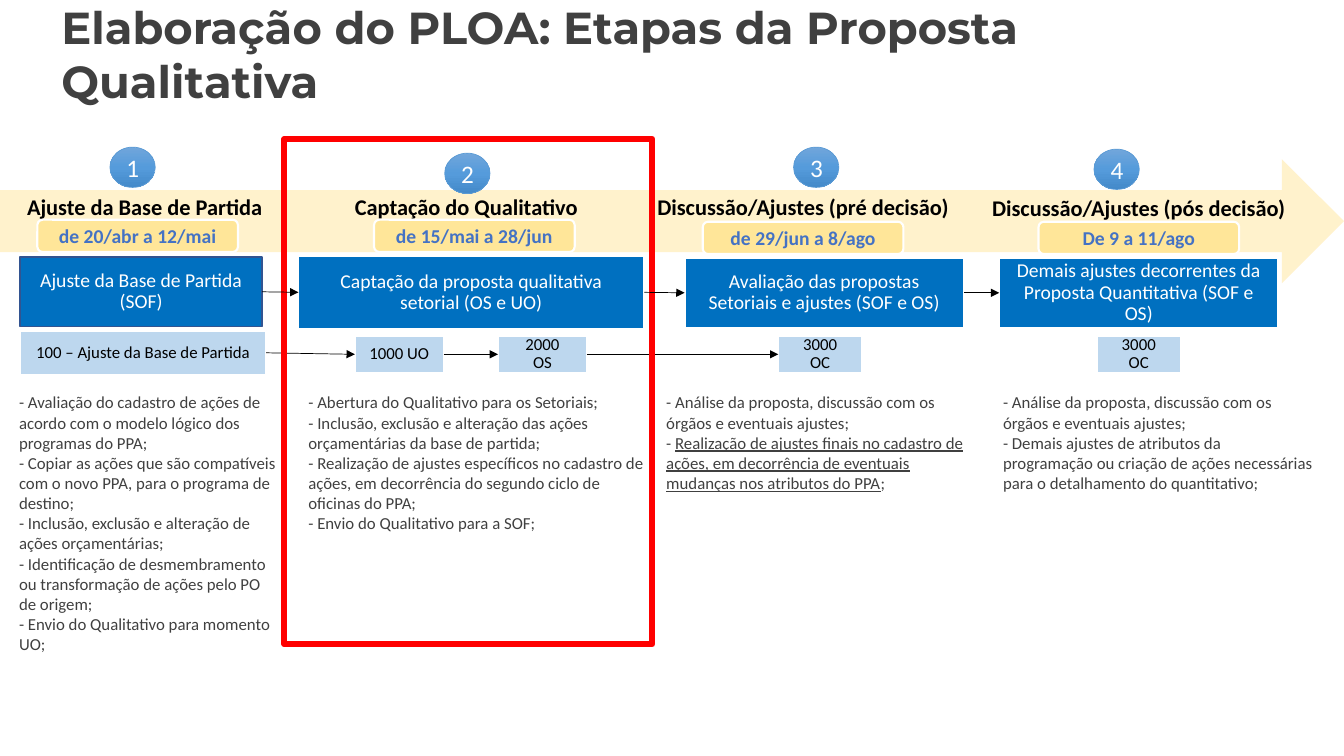
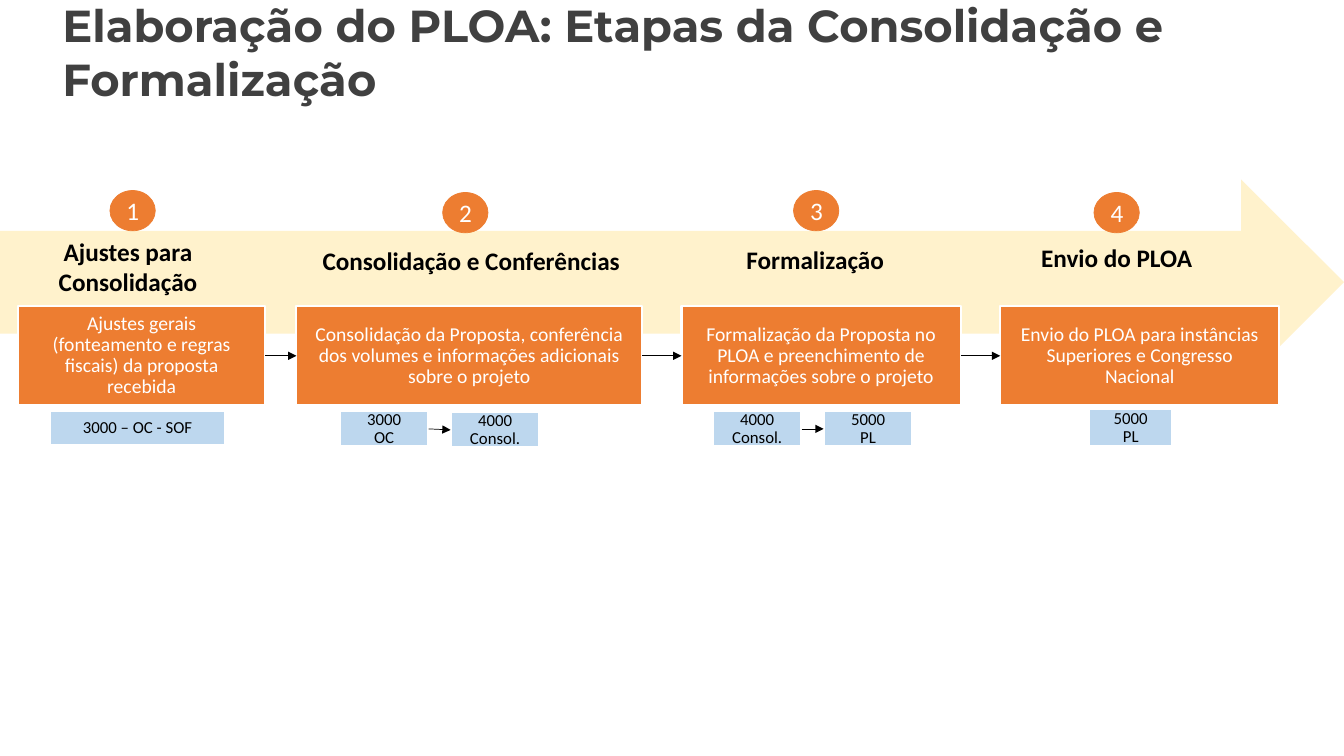
"""Build two slides showing the stages of the PLOA budget proposal."""
from copy import deepcopy
from itertools import pairwise

from pptx import Presentation
from pptx.dml.color import RGBColor
from pptx.enum.shapes import MSO_CONNECTOR, MSO_SHAPE
from pptx.enum.text import MSO_ANCHOR, PP_ALIGN
from pptx.oxml.ns import qn
from pptx.oxml.xmlchemy import OxmlElement
from pptx.util import Inches, Pt

THEME = {
    "band": "FFF2CC",
    "chip": "BDD7EE",
    "date": "FFE699",
    "white": "FFFFFF",
    "black": "000000",
    "highlight": "FF0000",
    "title": {"name": "Montserrat", "size": 32, "bold": True, "color": "404040"},
    "badge": {"name": "Calibri", "size": 18, "color": "FFFFFF"},
    "step": {"name": "Calibri", "size": 14, "color": "FFFFFF"},
    "code": {"name": "Calibri", "size": 12, "color": "000000"},
    "when": {"name": "Calibri", "size": 14, "bold": True, "color": "4472C4"},
    "note": {"name": "Calibri", "size": 12, "color": "404040"},
    "label": {"name": "Calibri", "bold": True, "color": "000000"},
    "inset": 0.12,
    "narrow": 0.18,
}
WIDE, NARROW = THEME["inset"], THEME["narrow"]

QUALITATIVE = {
    "title": ("Elaboração do PLOA: Etapas da Proposta Qualitativa", (0.51, 0.01, 10.62, 1.04)),
    "band": (0, 1.58, 13.33, 1.23),
    "step_fill": "0070C0",
    "badge_fill": ("71A6DB", "559BDB", "448ACA"),
    "badge_line": "5B9BD5",
    "label_size": 16,
    "badges": [(1.09, 1.46), (4.41, 1.52), (7.87, 1.46), (10.85, 1.48)],
    "labels": [
        ("Ajuste da Base de Partida", (0.09, 1.87, 2.69, 0.37)),
        ("Captação do Qualitativo", (2.96, 1.87, 3.33, 0.37)),
        ("Discussão/Ajustes (pré decisão)", (6.38, 1.87, 3.17, 0.37)),
        ("Discussão/Ajustes (pós decisão)", (9.56, 1.88, 3.47, 0.37)),
    ],
    "dates": [
        ("de 20/abr a 12/mai", (0.37, 2.18, 1.99, 0.32)),
        ("de 15/mai a 28/jun", (3.71, 2.18, 1.99, 0.32)),
        ("de 29/jun a 8/ago", (6.97, 2.2, 1.99, 0.32)),
        ("De 9 a 11/ago", (10.3, 2.2, 1.99, 0.32)),
    ],
    "steps": [
        ("Ajuste da Base de Partida (SOF)", (0.2, 2.55, 2.4, 0.69), ("325491", 1)),
        ("Captação da proposta qualitativa setorial (OS e UO)", (2.96, 2.54, 3.43, 0.72)),
        ("Avaliação das propostas Setoriais e ajustes (SOF e OS)", (6.79, 2.56, 2.77, 0.69)),
        ("Demais ajustes decorrentes da Proposta Quantitativa (SOF e OS)", (9.91, 2.56, 2.77, 0.69)),
    ],
    "chips": [
        ("100 – Ajuste da Base de Partida", (0.2, 3.28, 2.44, 0.44), WIDE),
        ("1000 UO", (3.52, 3.33, 0.88, 0.37), WIDE),
        ("2000 OS", (4.94, 3.33, 0.88, 0.37), NARROW),
        ("3000 OC", (7.72, 3.33, 0.83, 0.37), NARROW),
        ("3000 OC", (10.88, 3.33, 0.83, 0.37), NARROW),
    ],
    "chip_links": [(0, 1), (1, 2), (2, 3)],
    "notes": [
        ((0.09, 3.89, 2.69, 2.63), [
            "- Avaliação do cadastro de ações de acordo com o modelo lógico dos programas do PPA;",
            "- Copiar as ações que são compatíveis com o novo PPA, para o programa de destino;",
            "- Inclusão, exclusão e alteração de ações orçamentárias;",
            "- Identificação de desmembramento ou transformação de ações pelo PO de origem;",
            "- Envio do Qualitativo para momento UO;",
        ]),
        ((2.96, 3.89, 3.55, 1.41), [
            "- Abertura do Qualitativo para os Setoriais;",
            "- Inclusão, exclusão e alteração das ações orçamentárias da base de partida;",
            "- Realização de ajustes específicos no cadastro de ações, em decorrência do segundo "
            "ciclo de oficinas do PPA;",
            "- Envio do Qualitativo para a SOF;",
        ]),
        ((6.51, 3.89, 3.17, 1.01), [
            "- Análise da proposta, discussão com os órgãos e eventuais ajustes;",
            ("- ", "Realização de ajustes finais no cadastro de ações, em decorrência de eventuais "
             "mudanças nos atributos do PPA", ";"),
        ]),
        ((9.85, 3.89, 3.17, 1.21), [
            "- Análise da proposta, discussão com os órgãos e eventuais ajustes;",
            "- Demais ajustes de atributos da programação ou criação de ações necessárias para o "
            "detalhamento do quantitativo;",
        ]),
    ],
    "highlight": (2.82, 1.38, 3.65, 5.01),
}

FORMALIZATION = {
    "title": ("Elaboração do PLOA: Etapas da Consolidação e Formalização", (0.52, 0.21, 11.89, 0.61)),
    "band": (0, 1.78, 13.33, 2.04),
    "step_fill": "ED7D31",
    "badge_fill": ("ED7D31",),
    "badge_line": "ED7D31",
    "label_size": 18,
    "badges": [(1.09, 1.89), (4.39, 1.91), (7.87, 1.89), (10.85, 1.91)],
    "labels": [
        ("Ajustes para Consolidação", (0.18, 2.29, 2.18, 0.71)),
        ("Consolidação e Conferências", (3.01, 2.38, 3.33, 0.4)),
        ("Formalização", (6.5, 2.37, 3.17, 0.4)),
        ("Envio do PLOA", (9.53, 2.35, 3.09, 0.4)),
    ],
    "steps": [
        ("Ajustes gerais (fonteamento e regras fiscais) da proposta recebida", (0.18, 3.04, 2.45, 0.98)),
        ("Consolidação da Proposta, conferência dos volumes e informações adicionais sobre o projeto",
         (2.94, 3.04, 3.43, 0.98)),
        ("Formalização da Proposta no PLOA e preenchimento de informações sobre o projeto",
         (6.76, 3.04, 2.77, 0.98)),
        ("Envio do PLOA para instâncias Superiores e Congresso Nacional", (9.92, 3.04, 2.77, 0.98)),
    ],
    "chips": [
        ("3000 – OC - SOF", (0.5, 4.08, 1.73, 0.34), WIDE),
        ("3000 OC", (3.37, 4.08, 0.88, 0.35), NARROW),
        ("4000 Consol.", (4.47, 4.09, 0.88, 0.35), NARROW),
        ("4000 Consol.", (7.07, 4.08, 0.88, 0.35), NARROW),
        ("5000 PL", (8.17, 4.08, 0.88, 0.35), NARROW),
        ("5000 PL", (10.8, 4.06, 0.83, 0.37), NARROW),
    ],
    "chip_links": [(1, 2), (3, 4)],
}


def write(shape, paragraphs, style, align=PP_ALIGN.CENTER, anchor=MSO_ANCHOR.MIDDLE,
          spacing=None, margins=(0.1, 0.05, 0.1, 0.05)):
    frame = shape.text_frame
    frame.word_wrap = True
    frame.vertical_anchor = anchor
    for side, margin in zip(("left", "top", "right", "bottom"), margins):
        setattr(frame, f"margin_{side}", Inches(margin))
    for index, content in enumerate(paragraphs):
        para = frame.add_paragraph() if index else frame.paragraphs[0]
        para.alignment = align
        para.line_spacing = spacing
        parts = (content,) if isinstance(content, str) else content
        for position, part in enumerate(parts):
            span = para.add_run()
            span.text = part
            values = {"name": style["name"], "size": Pt(style["size"]),
                      "bold": style.get("bold", False), "underline": position == 1}
            for name, value in values.items():
                setattr(span.font, name, value)
            span.font.color.rgb = RGBColor.from_string(style["color"])


def add_text(page, area, paragraphs, style, **layout):
    box = page.shapes.add_textbox(*map(Inches, area))
    write(box, paragraphs, style, **layout)


def add_block(page, kind, area, fill=None, line=None):
    block = page.shapes.add_shape(kind, *map(Inches, area))
    block.shadow.inherit = False
    if fill:
        block.fill.solid()
        block.fill.fore_color.rgb = RGBColor.from_string(fill)
    else:
        block.fill.background()
    if line:
        color, width = line
        block.line.color.rgb = RGBColor.from_string(color)
        block.line.width = Pt(width)
    else:
        block.line.fill.background()
    return block


def shade(block, colors):
    block.fill.gradient()
    block.fill.gradient_angle = 270
    stops = block.element.spPr.find(qn("a:gradFill")).find(qn("a:gsLst"))
    stops.insert(1, deepcopy(stops[0]))
    for index, (stop, color) in enumerate(zip(block.fill.gradient_stops, colors)):
        stop.position = index / (len(colors) - 1)
        stop.color.rgb = RGBColor.from_string(color)


def link(page, source, target):
    left, top, width, height = source
    start = (left + width, top + height / 2)
    end = (target[0], target[1] + target[3] / 2)
    arrow = page.shapes.add_connector(MSO_CONNECTOR.STRAIGHT, *map(Inches, start + end))
    arrow.line.color.rgb = RGBColor.from_string(THEME["black"])
    arrow.line.width = Pt(0.5)
    head = OxmlElement("a:tailEnd")
    head.set("type", "triangle")
    arrow.line._get_or_add_ln().append(head)
    arrow.element.spPr.append(OxmlElement("a:effectLst"))


def build_page(deck, content):
    page = deck.slides.add_slide(deck.slide_layouts[6])
    outline = (THEME["white"], 1.5)
    add_block(page, MSO_SHAPE.RIGHT_ARROW, content["band"], THEME["band"])
    title, area = content["title"]
    add_text(page, area, [title], THEME["title"], align=PP_ALIGN.LEFT)

    for text, area, *border in content["steps"]:
        step = add_block(page, MSO_SHAPE.RECTANGLE, area, content["step_fill"],
                         border[0] if border else outline)
        write(step, [text], THEME["step"], spacing=0.9, margins=(WIDE,) * 4)
    for area, paragraphs in content.get("notes", []):
        add_text(page, area, paragraphs, THEME["note"], align=PP_ALIGN.LEFT,
                 anchor=MSO_ANCHOR.TOP, margins=(0.1, 0, 0, 0))

    label_style = {**THEME["label"], "size": content["label_size"]}
    for text, area in content["labels"]:
        add_text(page, area, [text], label_style, anchor=MSO_ANCHOR.TOP)
    for number, corner in enumerate(content["badges"], 1):
        colors = content["badge_fill"]
        badge = add_block(page, MSO_SHAPE.OVAL, (*corner, 0.45, 0.4), colors[0],
                          (content["badge_line"], 0.5))
        if len(colors) > 1:
            shade(badge, colors)
        write(badge, [str(number)], THEME["badge"])
    for text, area, inset in content["chips"]:
        chip = add_block(page, MSO_SHAPE.RECTANGLE, area, THEME["chip"], outline)
        write(chip, [text], THEME["code"], spacing=0.9, margins=(inset, WIDE) * 2)
    for text, area in content.get("dates", []):
        date = add_block(page, MSO_SHAPE.ROUNDED_RECTANGLE, area, THEME["date"], outline)
        write(date, [text], THEME["when"])

    chip_areas = [area for _, area, _ in content["chips"]]
    for source, target in content["chip_links"]:
        link(page, chip_areas[source], chip_areas[target])
    if "highlight" in content:
        add_block(page, MSO_SHAPE.RECTANGLE, content["highlight"], line=(THEME["highlight"], 4.5))
    for source, target in pairwise(step[1] for step in content["steps"]):
        link(page, source, target)


def main():
    deck = Presentation()
    deck.slide_width, deck.slide_height = Inches(13.33), Inches(7.5)
    for content in (QUALITATIVE, FORMALIZATION):
        build_page(deck, content)
    deck.save("out.pptx")


if __name__ == "__main__":
    main()
